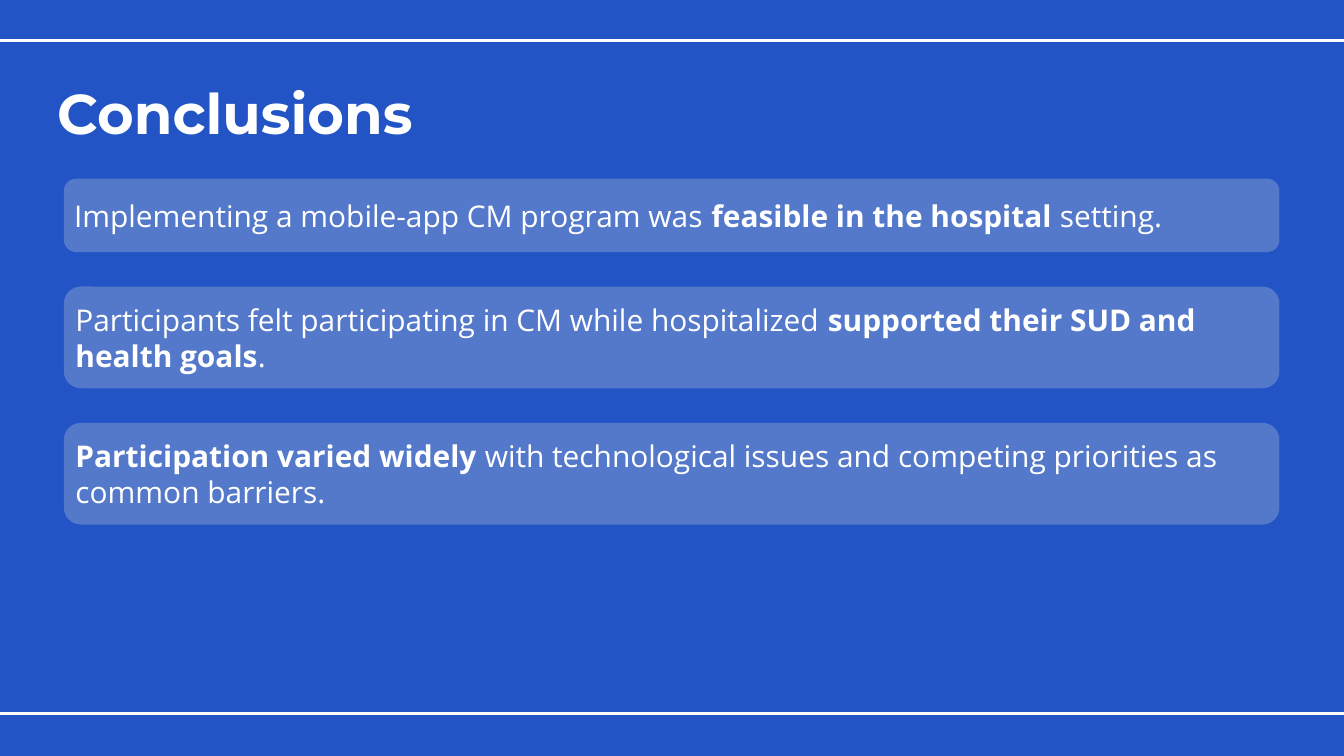
from lxml.etree import SubElement
from pptx import Presentation
from pptx.dml.color import RGBColor
from pptx.enum.shapes import MSO_CONNECTOR as Connector, MSO_SHAPE as Shape
from pptx.enum.text import MSO_ANCHOR as Anchor, PP_ALIGN as Align
from pptx.oxml.ns import qn
from pptx.util import Pt

WIDTH, HEIGHT = 1440, 810
WHITE, BLUE, GREY = "FFFFFF", "2254C5", "D9D9D9"
CARD_LEFT, CARD_TOP, CARD_WIDTH, CARD_GAP = 68.4, 191.5, 1302.5, 37

# Each card: height, then (text, bold) spans
CARDS = [
    (78.5, [("Implementing a mobile-app CM program was ", False),
            ("feasible in the hospital ", True),
            ("setting.", False)]),
    (109, [("Participants felt participating in CM while hospitalized ", False),
           ("supported their SUD and health goals", True),
           (".", False)]),
    (109, [("Participation varied widely ", True),
           ("with technological issues and competing priorities "
            "as common barriers.", False)]),
]


def paint(color_format, color):
    color_format.rgb = RGBColor.from_string(color)


def set_font(font, name, size):
    font.name = name
    font.size = Pt(size)
    paint(font.fill_color if hasattr(font, "fill_color") else font.color, WHITE)


def set_opacity(shape, percent):
    color = shape.fill._xPr.find(qn("a:solidFill"))[0]
    SubElement(color, qn("a:alpha"), val=str(percent * 1000))


def add_rule(page, y):
    """Draw a horizontal line across the whole page."""
    rule = page.shapes.add_connector(
        Connector.STRAIGHT, Pt(0), Pt(y), Pt(WIDTH + 8.6), Pt(y))
    paint(rule.line.color, WHITE)
    rule.line.width = Pt(3)
    SubElement(rule._element.spPr, qn("a:effectLst"))


def add_title(page, text):
    box = page.shapes.add_textbox(Pt(61.2), Pt(56.9), Pt(780), Pt(91.4))
    frame = box.text_frame
    frame.word_wrap = True
    frame.margin_left = frame.margin_right = 0
    frame.margin_top = frame.margin_bottom = 0
    para = frame.paragraphs[0]
    para.text = text
    para.line_spacing = Pt(99.1)
    set_font(para.font, "Montserrat", 60)
    para.font.bold = True


def add_card(page, top, height, spans):
    card = page.shapes.add_shape(
        Shape.ROUNDED_RECTANGLE,
        Pt(CARD_LEFT), Pt(top), Pt(CARD_WIDTH), Pt(height))
    card.shadow.inherit = False
    card.fill.solid()
    paint(card.fill.fore_color, GREY)
    set_opacity(card, 28)
    card.line.fill.background()
    frame = card.text_frame
    frame.word_wrap = True
    frame.vertical_anchor = Anchor.MIDDLE
    para = frame.paragraphs[0]
    para.alignment = Align.LEFT
    set_font(para.font, "Open Sans", 32)
    for text, bold in spans:
        span = para.add_run()
        span.text = text
        span.font.bold = bold


def main():
    deck = Presentation()
    deck.slide_width, deck.slide_height = Pt(WIDTH), Pt(HEIGHT)
    page = deck.slides.add_slide(deck.slide_layouts[6])
    page.background.fill.solid()
    paint(page.background.fill.fore_color, BLUE)

    for y in (43.2, 764.8):
        add_rule(page, y)
    add_title(page, "Conclusions")
    top = CARD_TOP
    for height, spans in CARDS:
        add_card(page, top, height, spans)
        top += height + CARD_GAP
    deck.save("out.pptx")


if __name__ == "__main__":
    main()
